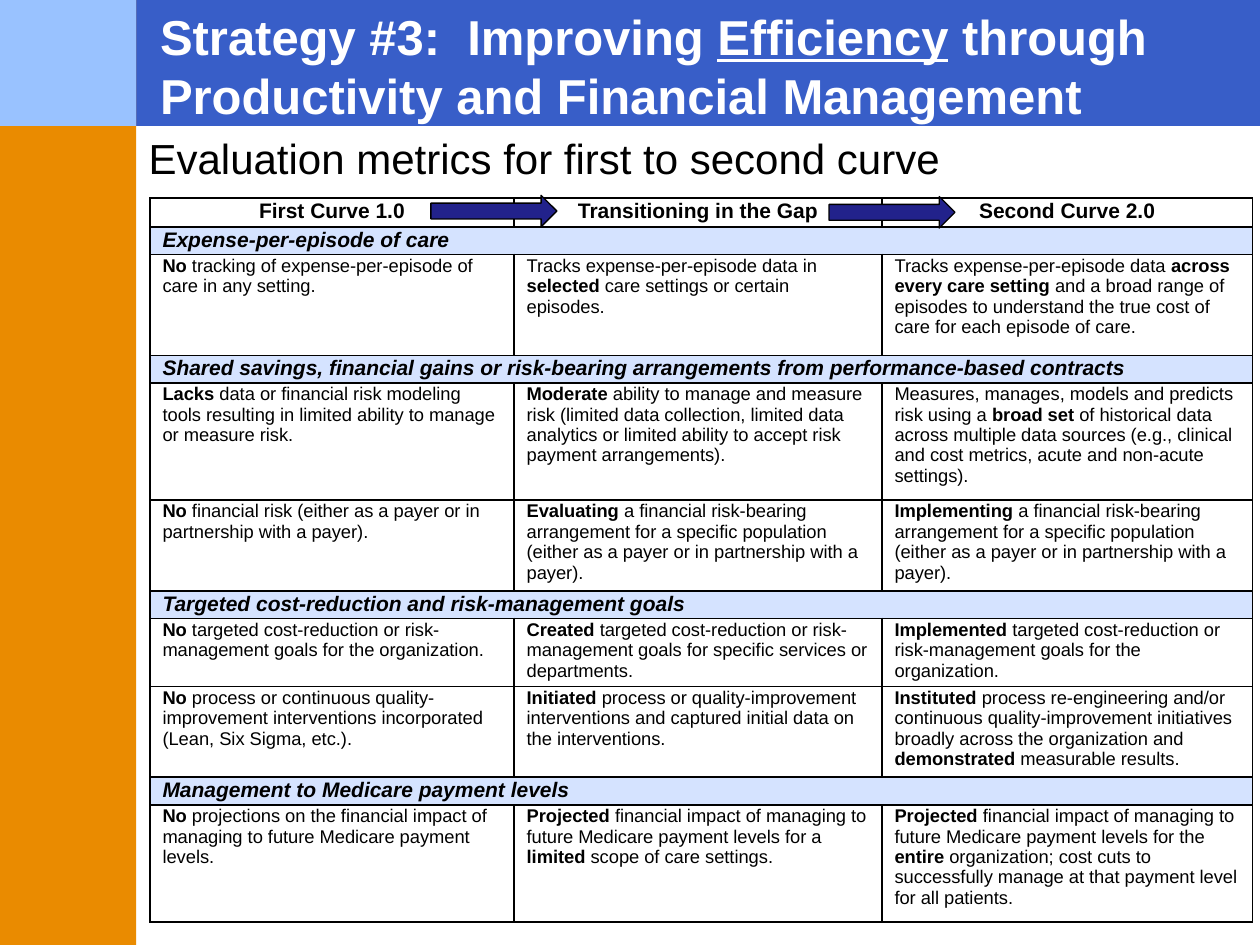
"""Build the slide on efficiency metrics from the first to the second curve."""
from typing import NamedTuple

from lxml import etree
from pptx import Presentation, util as u
from pptx.dml.color import RGBColor
from pptx.enum import shapes, text
from pptx.oxml.ns import qn

COLORS = {
    "banner": "385EC8", "sidebar": "EA8B00", "corner": "99C2FF",
    "section": "D5E3FF", "arrow": "22228B", "white": "FFFFFF", "black": "000000",
}


class Block(NamedTuple):
    kind: shapes.MSO_SHAPE
    left: float
    top: float
    width: float
    height: float
    fill: str
    outlined: bool = False


class Row(NamedTuple):
    height: float
    cells: tuple
    fill: str = "white"
    format: dict = {"size": u.Pt(10.5)}
    align: text.PP_ALIGN = text.PP_ALIGN.LEFT


RECT, ARROW = shapes.MSO_SHAPE.RECTANGLE, shapes.MSO_SHAPE.RIGHT_ARROW
BACKDROP = [
    Block(RECT, 0, 0, 10, 1, "banner"),
    Block(RECT, 0, 0, 1.08, 7.5, "sidebar"),
    Block(RECT, 0, 0, 1.08, 1, "corner"),
]
ARROWS = [Block(ARROW, left, top, 1, 0.25, "arrow", True)
          for left, top in ((3.42, 1.55), (6.58, 1.56))]
COLUMNS = (2.89, 2.92, 2.94)


def section(name: str) -> Row:
    """Return a full-width heading row."""
    return Row(0.22, (name,), "section", {"size": u.Pt(12), "bold": True, "italic": True})


ROWS = [
    Row(0.23, ("First Curve 1.0", "Transitioning in the Gap", "Second Curve 2.0"),
        format={"size": u.Pt(12), "bold": True}, align=text.PP_ALIGN.CENTER),
    section("Expense-per-episode of care"),
    Row(0.8, (
        "*No *tracking of expense-per-episode of care in any setting.",
        "Tracks expense-per-episode data in *selected *care settings or certain episodes.",
        "Tracks expense-per-episode data *across every care setting *and a broad range of "
        "episodes to understand the true cost of care for each episode of care.")),
    section("Shared savings, financial gains or risk-bearing arrangements from "
            "performance-based contracts"),
    Row(0.93, (
        "*Lacks *data or financial risk modeling tools resulting in limited ability to "
        "manage or measure risk.",
        "*Moderate *ability to manage and measure risk (limited data collection, limited "
        "data analytics or limited ability to accept risk payment arrangements).",
        "Measures, manages, models and predicts risk using a *broad set *of historical data "
        "across multiple data sources (e.g., clinical and cost metrics, acute and non-acute "
        "settings).")),
    Row(0.72, (
        "*No *financial risk (either as a payer or in partnership with a payer).",
        *(f"*{verb} *a financial risk-bearing arrangement for a specific population "
          "(either as a payer or in partnership with a payer)."
          for verb in ("Evaluating", "Implementing")))),
    section("Targeted cost-reduction and risk-management goals"),
    Row(0.54, tuple(
        f"*{verb} *targeted cost-reduction or risk-management goals for {scope}."
        for verb, scope in (("No", "the organization"),
                            ("Created", "specific services or departments"),
                            ("Implemented", "the organization")))),
    Row(0.72, (
        "*No *process or continuous quality-improvement interventions incorporated "
        "(Lean, Six Sigma, etc.).",
        "*Initiated *process or quality-improvement interventions and captured initial "
        "data on the interventions.",
        "*Instituted *process re-engineering and/or continuous quality-improvement "
        "initiatives broadly across the organization and *demonstrated *measurable results.")),
    section("Management to Medicare payment levels"),
    Row(0.93, (
        "*No *projections on the financial impact of managing to future Medicare payment "
        "levels.",
        "*Projected *financial impact of managing to future Medicare payment levels for a "
        "*limited *scope of care settings.",
        "*Projected *financial impact of managing to future Medicare payment levels for the "
        "*entire *organization; cost cuts to successfully manage at that payment level for "
        "all patients.")),
]


def rgb(name: str) -> RGBColor:
    """Look up a named colour."""
    return RGBColor.from_string(COLORS[name])


def add_runs(p, marked: str, color: str, accent: str, formats: dict) -> None:
    """Write text whose starred parts switch on the accent attribute."""
    for i, part in enumerate(marked.split("*")):
        if part:
            r = p.add_run()
            r.text = part
            values = {"name": "Arial", **formats}
            if i % 2:
                values[accent] = True
            for name, value in values.items():
                setattr(r.font, name, value)
            r.font.color.rgb = rgb(color)


def add_block(s, block: Block):
    """Draw one filled shape."""
    sp = s.shapes.add_shape(block.kind, *map(u.Inches, block[1:5]))
    sp.shadow.inherit = False
    sp.fill.solid()
    sp.fill.fore_color.rgb = rgb(block.fill)
    if block.outlined:
        sp.line.color.rgb = rgb("black")
        sp.line.width = u.Pt(0.75)
    else:
        sp.line.fill.background()
    return sp


def fill_placeholder(sp, box: tuple, marked: str, color: str, formats: dict) -> None:
    """Place a placeholder and write its single paragraph."""
    sp.left, sp.top, sp.width, sp.height = map(u.Inches, box)
    tf = sp.text_frame
    settings = {"word_wrap": True, "auto_size": text.MSO_AUTO_SIZE.NONE,
                "vertical_anchor": text.MSO_ANCHOR.TOP}
    for name, value in settings.items():
        setattr(tf, name, value)
    p = tf.paragraphs[0]
    p.alignment = text.PP_ALIGN.LEFT
    p.space_before = u.Pt(0)
    pPr = p._p.get_or_add_pPr()
    pPr.set("marL", "0")
    pPr.set("indent", "0")
    etree.SubElement(pPr, qn("a:buNone"))
    add_runs(p, marked, color, "underline", formats)


def format_cell(cell, fill: str) -> None:
    """Set the margins, black borders and fill of a cell."""
    margins = {"left": 0.1, "right": 0.1, "top": 0.01, "bottom": 0.01}
    for side, value in margins.items():
        setattr(cell, f"margin_{side}", u.Inches(value))
    tcPr = cell._tc.get_or_add_tcPr()
    for side in "LRTB":
        ln = etree.SubElement(tcPr, qn(f"a:ln{side}"), w=str(u.Pt(1)))
        solid = etree.SubElement(ln, qn("a:solidFill"))
        etree.SubElement(solid, qn("a:srgbClr"), val=COLORS["black"])
    cell.fill.solid()
    cell.fill.fore_color.rgb = rgb(fill)


def add_metrics_table(s) -> None:
    """Draw the metrics table."""
    height = sum(row.height for row in ROWS)
    tbl = s.shapes.add_table(len(ROWS), len(COLUMNS), u.Inches(1.19), u.Inches(1.57),
                             u.Inches(sum(COLUMNS)), u.Inches(height)).table
    tbl.first_row = tbl.horz_banding = False
    for column, width in zip(tbl.columns, COLUMNS):
        column.width = u.Inches(width)
    for i, row in enumerate(ROWS):
        tbl.rows[i].height = u.Inches(row.height)
        for j in range(len(COLUMNS)):
            format_cell(tbl.cell(i, j), row.fill)
        if len(row.cells) == 1:
            tbl.cell(i, 0).merge(tbl.cell(i, len(COLUMNS) - 1))
        for j, marked in enumerate(row.cells):
            p = tbl.cell(i, j).text_frame.paragraphs[0]
            p.alignment = row.align
            add_runs(p, marked, "black", "bold", row.format)


def main() -> None:
    """Build and save the slide."""
    prs = Presentation()
    prs.slide_width, prs.slide_height = u.Inches(10), u.Inches(7.5)
    s = prs.slides.add_slide(prs.slide_layouts[1])
    for i, block in enumerate(BACKDROP):
        s.shapes.element.insert(2 + i, add_block(s, block).element)
    fill_placeholder(s.shapes.title, (1.17, 0, 8.83, 1.04),
                     "Strategy #3:  Improving *Efficiency* through Productivity and "
                     "Financial Management", "white", {"size": u.Pt(28), "bold": True})
    fill_placeholder(s.placeholders[1], (1.08, 1, 8.92, 0.5),
                     "Evaluation metrics for first to second curve", "black",
                     {"size": u.Pt(24)})
    add_metrics_table(s)
    for arrow in ARROWS:
        add_block(s, arrow)
    prs.save("out.pptx")


if __name__ == "__main__":
    main()
